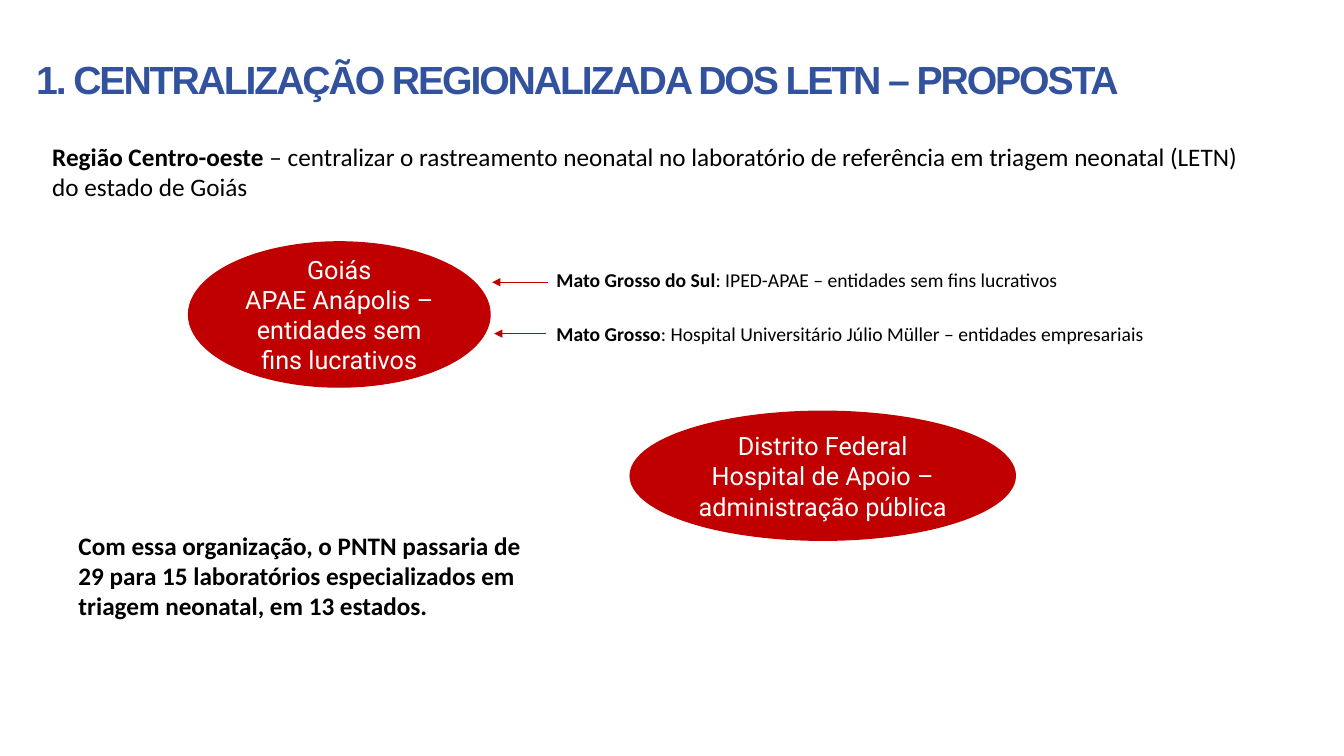
from dataclasses import dataclass

from lxml import etree
from pptx import Presentation
from pptx import util as u
from pptx.dml.color import RGBColor
from pptx.enum import shapes, text
from pptx.oxml import ns


@dataclass(frozen=True)
class Theme:
    blue: RGBColor = RGBColor.from_string("33529E")
    red: RGBColor = RGBColor.from_string("C00000")
    black: RGBColor = RGBColor.from_string("000000")
    white: RGBColor = RGBColor.from_string("FFFFFF")
    title_size: int = 28
    body_size: int = 18
    label_size: int = 14


theme = Theme()


def write(sp, bold="", plain="", size=theme.body_size, font="Calibri", color=theme.black,
          align=text.PP_ALIGN.LEFT, anchor=text.MSO_ANCHOR.TOP, line_spacing=None, tracking=None):
    tf = sp.text_frame
    tf.word_wrap = True
    tf.vertical_anchor = anchor
    for i, line in enumerate((bold + plain).split("\n")):
        p = tf.paragraphs[0] if i == 0 else tf.add_paragraph()
        p.alignment = align
        p.line_spacing = line_spacing
        for content, is_bold in ((bold, True), (plain and line[len(bold):], False)):
            if not content:
                continue
            r = p.add_run()
            r.text = content
            r.font.name = font
            r.font.size = u.Pt(size)
            r.font.bold = is_bold
            r.font.color.rgb = color
            if tracking:
                r.font._element.set("spc", str(tracking))


prs = Presentation()
prs.slide_width = u.Inches(13.33)
prs.slide_height = u.Inches(7.5)
s = prs.slides.add_slide(prs.slide_layouts[6])

title = s.shapes.add_shape(shapes.MSO_SHAPE.RECTANGLE, u.Inches(0.26), u.Inches(0.55),
                           u.Inches(11.11), u.Inches(1.08))
title.shadow.inherit = False
title.fill.solid()
title.fill.fore_color.rgb = theme.white
title.line.fill.background()
write(title, "1. CENTRALIZAÇÃO REGIONALIZADA DOS LETN – PROPOSTA", size=theme.title_size,
      font="Arial", color=theme.blue, line_spacing=0.9, tracking=-150)

notes = [
    (0.42, 1.35, 12.06, 0.71, theme.body_size, "Região Centro-oeste ",
     "– centralizar o rastreamento neonatal no laboratório de referência em triagem neonatal "
     "(LETN) do estado de Goiás"),
    (5.42, 2.61, 5.49, 0.34, theme.label_size, "Mato Grosso do Sul",
     ": IPED-APAE – entidades sem fins lucrativos"),
    (5.42, 3.14, 6.18, 0.34, theme.label_size, "Mato Grosso",
     ": Hospital Universitário Júlio Müller – entidades empresariais"),
    (0.68, 5.21, 4.75, 1.01, theme.body_size,
     "Com essa organização, o PNTN passaria de 29 para 15 laboratórios especializados em "
     "triagem neonatal, em 13 estados.", ""),
]
for left, top, width, height, size, bold, plain in notes:
    sp = s.shapes.add_textbox(u.Inches(left), u.Inches(top), u.Inches(width), u.Inches(height))
    write(sp, bold, plain, size=size)

laboratories = [
    (1.87, 2.4, 2.99, 1.44, "Goiás\nAPAE Anápolis – entidades sem fins lucrativos"),
    (6.25, 4.08, 3.82, 1.28, "Distrito Federal\nHospital de Apoio – administração pública"),
]
for left, top, width, height, label in laboratories:
    sp = s.shapes.add_shape(shapes.MSO_SHAPE.OVAL, u.Inches(left), u.Inches(top),
                            u.Inches(width), u.Inches(height))
    sp.shadow.inherit = False
    sp.fill.solid()
    sp.fill.fore_color.rgb = theme.red
    sp.line.color.rgb = theme.red
    sp.line.width = u.Pt(1)
    write(sp, plain=label, font="Roboto", color=theme.white,
          align=text.PP_ALIGN.CENTER, anchor=text.MSO_ANCHOR.MIDDLE)

for start, end, y in ((5.44, 4.88, 2.8), (5.42, 4.9, 3.31)):
    arrow = s.shapes.add_connector(shapes.MSO_CONNECTOR.STRAIGHT, u.Inches(start), u.Inches(y),
                                   u.Inches(end), u.Inches(y))
    arrow.line.color.rgb = theme.red
    arrow.line.width = u.Pt(0.5)
    etree.SubElement(arrow.line._get_or_add_ln(), ns.qn("a:tailEnd"), type="triangle")
    etree.SubElement(arrow._element.spPr, ns.qn("a:effectLst"))

prs.save("out.pptx")
